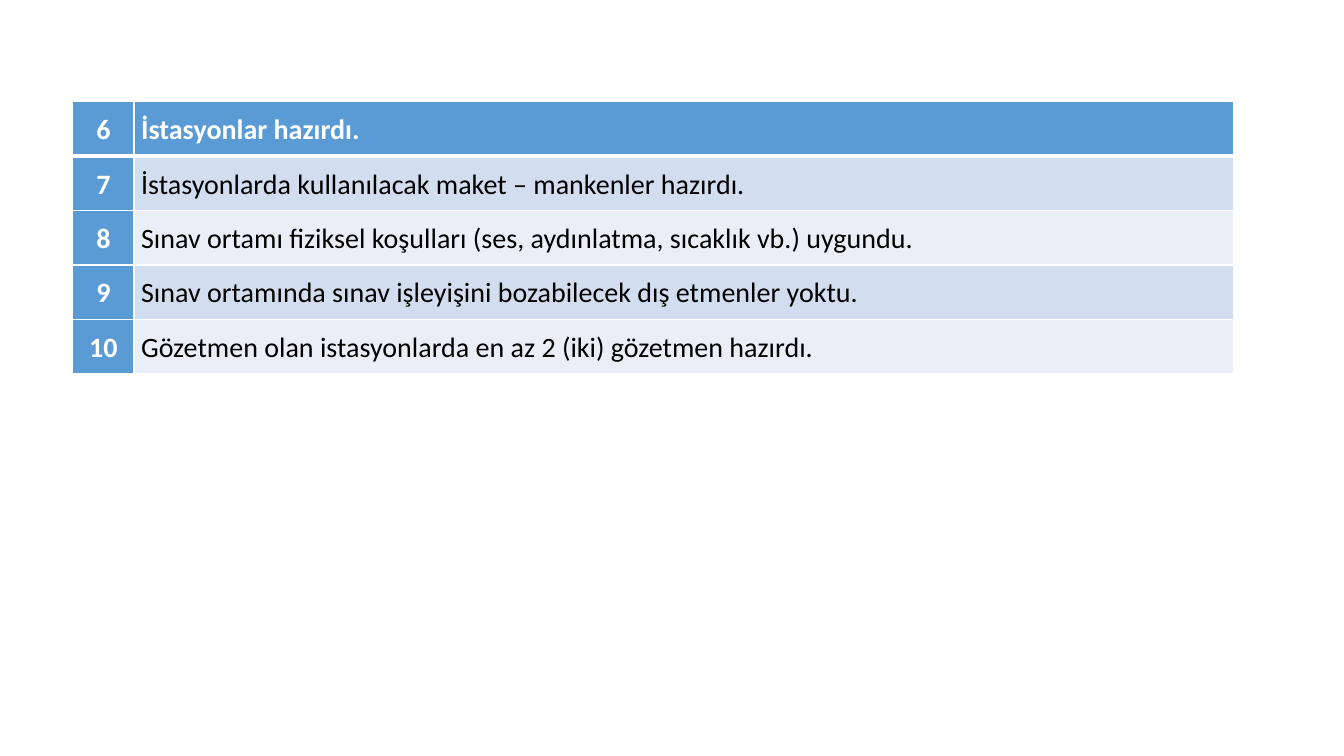
from dataclasses import dataclass

from lxml import etree
from pptx import Presentation
from pptx import util as u
from pptx.dml.color import RGBColor
from pptx.enum import text
from pptx.oxml import ns
from pptx.table import _Cell


@dataclass(frozen=True)
class Theme:
    """Colours, font and type size of the slide."""
    font: str = "Calibri"
    size: int = 20
    accent: str = "5B9BD5"
    bands: tuple[str, str] = ("D2DEEF", "EAEFF7")
    light: str = "FFFFFF"
    dark: str = "000000"
    thin: int = 1
    thick: int = 3


@dataclass(frozen=True)
class ChecklistItem:
    """A numbered statement of the checklist."""
    number: int
    statement: str


THEME = Theme()
LEFT, TOP = 0.72, 1.01
COLUMN_WIDTHS = (0.61, 10.91)
ROW_HEIGHT = 0.54
CHECKLIST = (
    ChecklistItem(6, "İstasyonlar hazırdı."),
    ChecklistItem(7, "İstasyonlarda kullanılacak maket – mankenler hazırdı."),
    ChecklistItem(8, "Sınav ortamı fiziksel koşulları (ses, aydınlatma, sıcaklık vb.) uygundu."),
    ChecklistItem(9, "Sınav ortamında sınav işleyişini bozabilecek dış etmenler yoktu."),
    ChecklistItem(10, "Gözetmen olan istasyonlarda en az 2 (iki) gözetmen hazırdı."),
)


def set_borders(cell: _Cell, top: int, bottom: int) -> None:
    """Draw the four borders of a cell, with widths in points."""
    properties = cell._tc.get_or_add_tcPr()
    widths = {"a:lnL": THEME.thin, "a:lnR": THEME.thin, "a:lnT": top, "a:lnB": bottom}
    for tag, width in widths.items():
        line = etree.SubElement(properties, ns.qn(tag), w=str(u.Pt(width)))
        fill = etree.SubElement(line, ns.qn("a:solidFill"))
        etree.SubElement(fill, ns.qn("a:srgbClr"), val=THEME.light)


def write_cell(cell: _Cell, content: str, fill: str, emphasized: bool, centered: bool) -> None:
    """Fill a cell and set its text."""
    cell.fill.solid()
    cell.fill.fore_color.rgb = RGBColor.from_string(fill)
    cell.vertical_anchor = text.MSO_ANCHOR.MIDDLE
    cell.margin_left = cell.margin_right = u.Inches(0.07)
    cell.margin_top = cell.margin_bottom = 0
    cell.text_frame.text = content
    paragraph = cell.text_frame.paragraphs[0]
    paragraph.alignment = text.PP_ALIGN.CENTER if centered else text.PP_ALIGN.LEFT
    paragraph.line_spacing = 1.07
    paragraph.space_after = u.Pt(8)
    font = paragraph.runs[0].font
    font.name = THEME.font
    font.size = u.Pt(THEME.size)
    font.bold = emphasized
    font.color.rgb = RGBColor.from_string(THEME.light if emphasized else THEME.dark)


def main() -> None:
    """Build the checklist slide."""
    presentation = Presentation()
    presentation.slide_width = u.Inches(13.33)
    presentation.slide_height = u.Inches(7.5)
    slide = presentation.slides.add_slide(presentation.slide_layouts[6])
    table = slide.shapes.add_table(
        len(CHECKLIST), len(COLUMN_WIDTHS), u.Inches(LEFT), u.Inches(TOP),
        u.Inches(sum(COLUMN_WIDTHS)), u.Inches(ROW_HEIGHT * len(CHECKLIST)),
    ).table
    table.first_col = True
    for column, width in zip(table.columns, COLUMN_WIDTHS):
        column.width = u.Inches(width)
    for index, item in enumerate(CHECKLIST):
        table.rows[index].height = u.Inches(ROW_HEIGHT)
        is_header = index == 0
        top = THEME.thick if index == 1 else THEME.thin
        bottom = THEME.thick if is_header else THEME.thin
        band = THEME.accent if is_header else THEME.bands[(index - 1) % 2]
        number_cell, statement_cell = table.cell(index, 0), table.cell(index, 1)
        for cell in (number_cell, statement_cell):
            set_borders(cell, top, bottom)
        write_cell(number_cell, str(item.number), THEME.accent, True, True)
        write_cell(statement_cell, item.statement, band, is_header, False)
    presentation.save("out.pptx")


if __name__ == "__main__":
    main()
